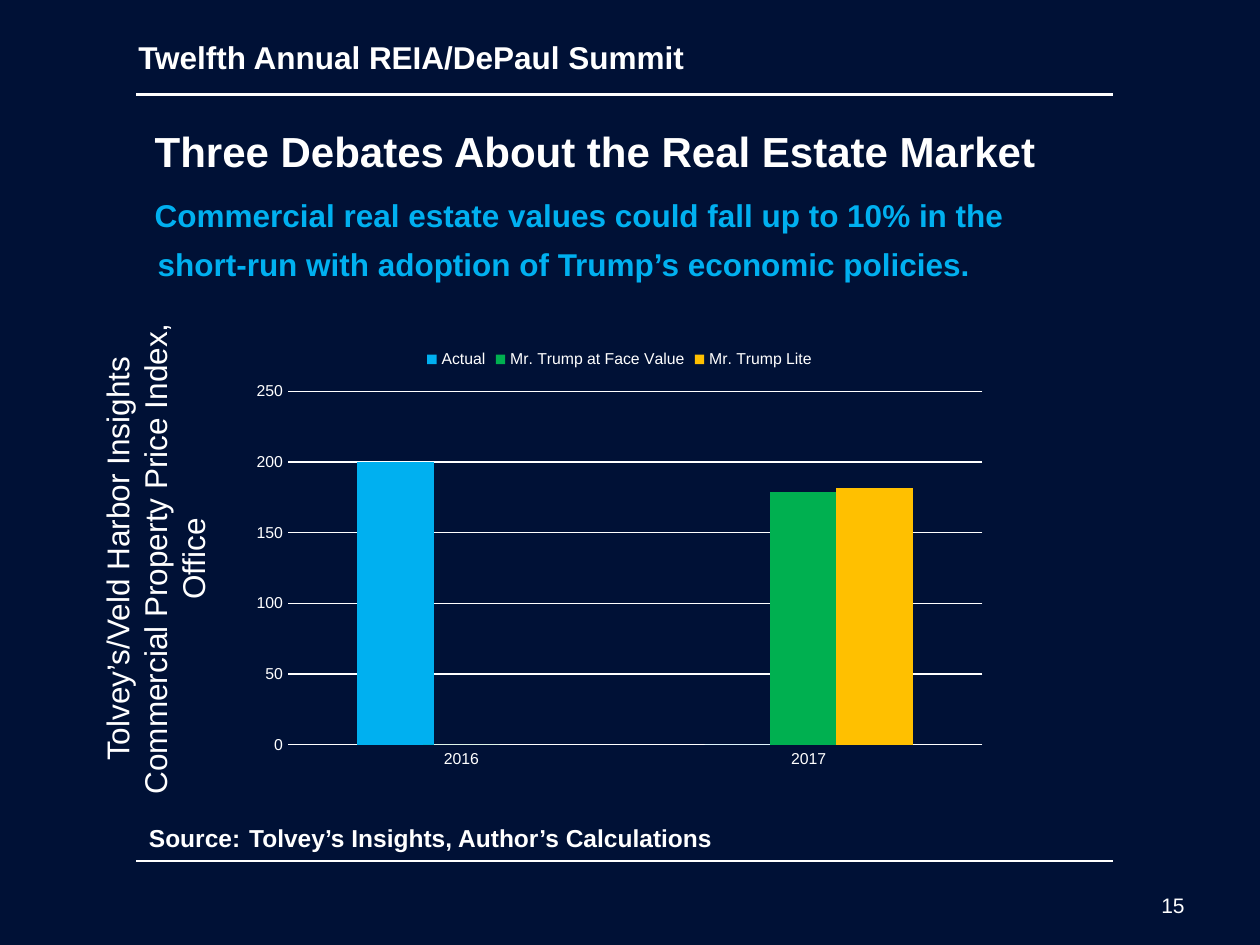
from dataclasses import dataclass

from lxml import etree
from pptx import Presentation
from pptx.chart.data import CategoryChartData
from pptx.dml.color import RGBColor
from pptx.enum.chart import XL_CHART_TYPE as ChartType
from pptx.enum.chart import XL_LEGEND_POSITION as LegendPosition
from pptx.enum.chart import XL_TICK_MARK as TickMark
from pptx.enum.shapes import MSO_CONNECTOR as Connector
from pptx.enum.text import MSO_ANCHOR as Anchor
from pptx.enum.text import PP_ALIGN as Align
from pptx.oxml.ns import qn
from pptx.util import Pt


@dataclass(frozen=True)
class Theme:
    font: str = "Arial"
    background: RGBColor = RGBColor(0x00, 0x11, 0x36)
    white: RGBColor = RGBColor(0xFF, 0xFF, 0xFF)
    blue: RGBColor = RGBColor(0x00, 0xB0, 0xF0)
    green: RGBColor = RGBColor(0x00, 0xB0, 0x50)
    gold: RGBColor = RGBColor(0xFF, 0xC0, 0x00)
    title: int = 24
    body: int = 18
    source: int = 14
    number: int = 12
    chart: int = 9


class SlideBuilder:
    def __init__(self, presentation, theme):
        self.theme = theme
        self.slide = presentation.slides.add_slide(presentation.slide_layouts[6])
        fill = self.slide.background.fill
        fill.solid()
        fill.fore_color.rgb = theme.background

    def style(self, font, size, color=None, bold=False):
        font.name = self.theme.font
        font.size = Pt(size)
        font.bold = bold
        font.color.rgb = color or self.theme.white

    def text_box(self, left, top, width, height, anchor=Anchor.TOP, rotation=0):
        shape = self.slide.shapes.add_textbox(Pt(left), Pt(top), Pt(width), Pt(height))
        shape.rotation = rotation
        frame = shape.text_frame
        frame.word_wrap = True
        frame.vertical_anchor = anchor
        return frame

    def paragraph(self, frame, runs, align=Align.LEFT, first=True,
                  indent=0, before=0, bold=True):
        paragraph = frame.paragraphs[0] if first else frame.add_paragraph()
        paragraph.alignment = align
        if indent:
            properties = paragraph._p.get_or_add_pPr()
            properties.set("marL", str(Pt(indent)))
            properties.set("indent", "0")
        if before:
            paragraph.space_before = Pt(before)
        for text, size, color in runs:
            run = paragraph.add_run()
            run.text = text
            self.style(run.font, size, color, bold)

    def rule(self, left, right, y):
        line = self.slide.shapes.add_connector(
            Connector.STRAIGHT, Pt(left), Pt(y), Pt(right), Pt(y))
        line.line.color.rgb = self.theme.white
        line.line.width = Pt(1.5)
        etree.SubElement(line._element.spPr, qn("a:effectLst"))

    def column_chart(self, left, top, width, height, categories, series):
        data = CategoryChartData(number_format="0")
        data.categories = categories
        for name, values, _ in series:
            data.add_series(name, values)
        chart = self.slide.shapes.add_chart(
            ChartType.COLUMN_CLUSTERED, Pt(left), Pt(top), Pt(width), Pt(height), data).chart
        self.style(chart.font, self.theme.chart)
        chart.has_title = False
        chart.has_legend = True
        chart.legend.position = LegendPosition.TOP
        chart.legend.include_in_layout = False
        self.style(chart.legend.font, self.theme.chart)

        plot = chart.plots[0]
        plot.gap_width = 182
        plot.overlap = 14
        plot.vary_by_categories = False
        for column, (_, _, color) in zip(plot.series, series):
            column.format.fill.solid()
            column.format.fill.fore_color.rgb = color

        value_axis, category_axis = chart.value_axis, chart.category_axis
        for axis in (value_axis, category_axis):
            axis.major_tick_mark = TickMark.NONE
            axis.minor_tick_mark = TickMark.NONE
            self.style(axis.tick_labels.font, self.theme.chart)
        value_axis.minimum_scale = 0
        value_axis.maximum_scale = 250
        value_axis.major_unit = 50
        value_axis.has_major_gridlines = True
        value_axis.format.line.fill.background()
        for line in (value_axis.major_gridlines.format.line, category_axis.format.line):
            line.color.rgb = self.theme.white
            line.width = Pt(0.75)


def main():
    theme = Theme()
    presentation = Presentation()
    presentation.slide_width = Pt(720)
    presentation.slide_height = Pt(540)
    builder = SlideBuilder(presentation, theme)

    heading = builder.text_box(48, 66, 558, 138)
    heading.margin_top = Pt(6)
    heading_lines = [
        ("Three Debates About the Real Estate Market", theme.title, theme.white, 33.3, 0),
        ("Commercial real estate values could fall up to 10% in the",
         theme.body, theme.blue, 33.3, 11.5),
        ("short-run with adoption of Trump’s economic policies.",
         theme.body, theme.blue, 35, 6),
    ]
    for index, (text, size, color, indent, before) in enumerate(heading_lines):
        builder.paragraph(heading, [(text, size, color)], first=index == 0,
                          indent=indent, before=before)

    for y in (54, 492):
        builder.rule(78, 636, y)

    number = builder.text_box(516, 492, 168, 36, anchor=Anchor.BOTTOM)
    builder.paragraph(number, [("15", theme.number, theme.white)],
                      align=Align.RIGHT, bold=False)

    event = builder.text_box(72, 18, 570, 29)
    builder.paragraph(event, [("Twelfth Annual REIA/DePaul Summit", theme.body, theme.white)])

    axis_title = builder.text_box(-78, 283, 333.5, 72.7, rotation=270)
    builder.paragraph(
        axis_title,
        [("Tolvey’s/Veld Harbor Insights Commercial Property Price Index, Office",
          theme.body, theme.white)],
        align=Align.CENTER, bold=False)

    source = builder.text_box(78, 463, 588, 29)
    builder.paragraph(source, [
        ("Source:", theme.source, theme.white),
        (" ", theme.body, theme.white),
        ("Tolvey’s Insights, Author’s Calculations", theme.source, theme.white),
    ])

    builder.column_chart(138, 192, 432, 252, ["2016", "2017"], [
        ("Actual", (200, 0), theme.blue),
        ("Mr. Trump at Face Value", (0, 179), theme.green),
        ("Mr. Trump Lite", (None, 182), theme.gold),
    ])

    presentation.save("out.pptx")


if __name__ == "__main__":
    main()
